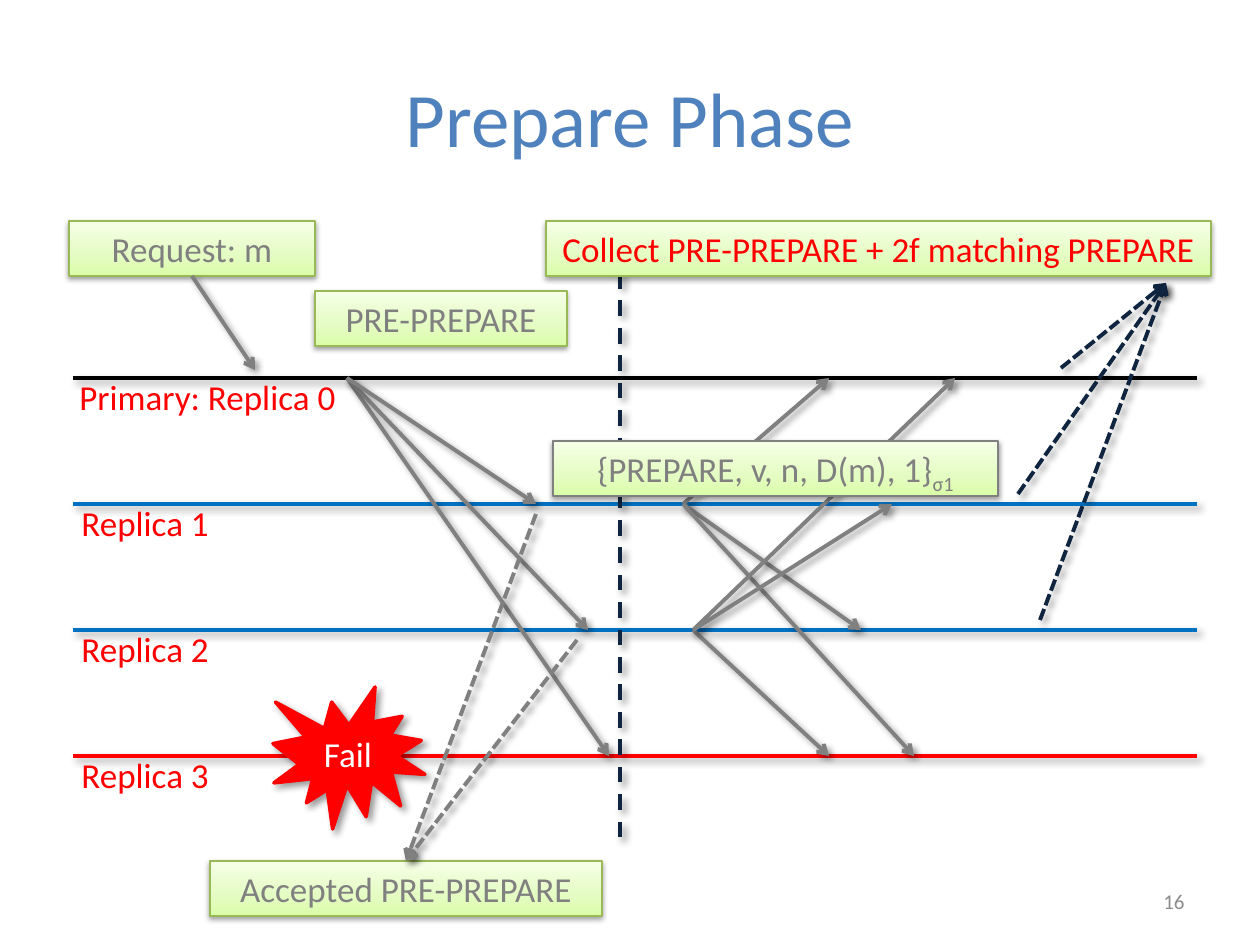
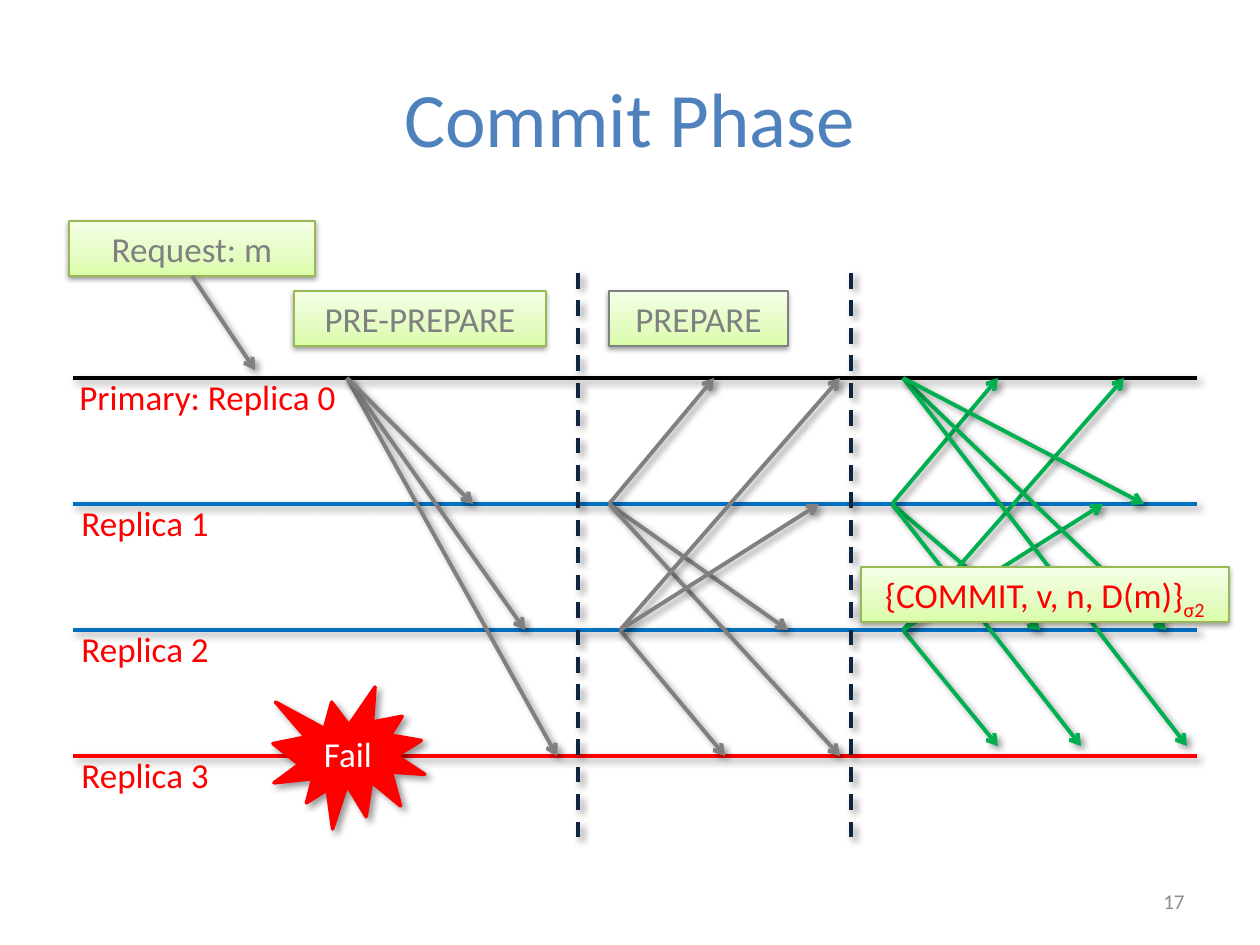
from copy import deepcopy

from lxml.etree import SubElement
from pptx import Presentation
from pptx.dml.color import RGBColor
from pptx.enum.dml import MSO_LINE
from pptx.enum.shapes import MSO_CONNECTOR, MSO_SHAPE
from pptx.enum.text import MSO_ANCHOR, MSO_AUTO_SIZE, PP_ALIGN
from pptx.oxml.ns import qn
from pptx.util import Pt

EMU_PER_PX = 914400 / 126
FONT = "Calibri"
TITLE_BLUE = "4F81BD"
GRAY = "808080"
RED = "FF0000"
WHITE = "FFFFFF"
NAVY = "0F243E"
GREEN = "00B050"
NUMBER_GRAY = "8C8C8C"
BOX_BORDER = "98B955"
BOX_STOPS = [(0, "DAFDA7"), (0.35, "E4FCC2"), (1, "F5FFE7")]
BOX_HEIGHT = 55
REPLICAS = [("Primary: Replica 0", "000000"), ("Replica 1", "0070C0"),
            ("Replica 2", "0070C0"), ("Replica 3", RED)]
FAILED = 3
REPLICA_GAP = 126
TOP, BOTTOM = 0, 2  # connection sites of a rectangle


def px(length):
    return round(length * EMU_PER_PX)


def rgb(hex_color):
    return RGBColor.from_string(hex_color)


def replica_y(replica):
    return 378 + replica * REPLICA_GAP


def write(shape, text, size=20, color=GRAY, align=PP_ALIGN.LEFT,
          anchor=MSO_ANCHOR.TOP, grow=False, subscript=""):
    frame = shape.text_frame
    frame.word_wrap = True
    frame.vertical_anchor = anchor
    frame.auto_size = MSO_AUTO_SIZE.SHAPE_TO_FIT_TEXT if grow else MSO_AUTO_SIZE.NONE
    paragraph = frame.paragraphs[0]
    paragraph.alignment = align
    for part in filter(None, (text, subscript)):
        run = paragraph.add_run()
        run.text = part
        run.font.name = FONT
        run.font.size = Pt(size)
        run.font.color.rgb = rgb(color)
    if subscript:
        run.font._element.set("baseline", "-25000")


def cast_shadow(shape, opacity=40, blur=4, distance=3, angle=45):
    properties = shape._element.spPr
    for old in properties.findall(qn("a:effectLst")):
        properties.remove(old)
    effects = SubElement(properties, qn("a:effectLst"))
    shadow = SubElement(effects, qn("a:outerShdw"), blurRad=str(Pt(blur)),
                        dist=str(Pt(distance)), dir=str(angle * 60000),
                        rotWithShape="0")
    tint = SubElement(shadow, qn("a:srgbClr"), val="000000")
    SubElement(tint, qn("a:alpha"), val=str(opacity * 1000))


def add_line(slide, start, end, color=GRAY, dash=None, arrow=False):
    line = slide.shapes.add_connector(MSO_CONNECTOR.STRAIGHT, *map(px, start + end))
    line.line.color.rgb = rgb(color)
    line.line.width = Pt(2.25)
    if dash:
        line.line.dash_style = dash
    if arrow:
        SubElement(line.line._get_or_add_ln(), qn("a:tailEnd"), type="arrow")
    cast_shadow(line)
    return line


def add_message(slide, text, left, top, width, color=GRAY, border=BOX_BORDER,
                subscript=""):
    box = slide.shapes.add_shape(MSO_SHAPE.RECTANGLE,
                                 *map(px, (left, top, width, BOX_HEIGHT)))
    box.fill.gradient()
    box.fill.gradient_angle = 90
    stops = box._element.spPr.find(".//" + qn("a:gsLst"))
    stops.insert(1, deepcopy(stops[0]))
    for stop, (position, stop_color) in zip(box.fill.gradient_stops, BOX_STOPS):
        stop.position = position
        stop.color.rgb = rgb(stop_color)
    box.line.color.rgb = rgb(border)
    box.line.width = Pt(0.75)
    cast_shadow(box, opacity=38, blur=3.1, distance=1.6, angle=90)
    write(box, text, color=color, align=PP_ALIGN.CENTER, grow=True,
          subscript=subscript)
    return box


def add_label(slide, text, left, top, width, height, **text_format):
    label = slide.shapes.add_textbox(*map(px, (left, top, width, height)))
    write(label, text, **text_format)


def add_broadcast(slide, x, sender, receivers, color=GRAY, failed_gap=0):
    """Arrows from the sender at x to {replica: x}; failed_gap stops short of Replica 3."""
    for replica, arrival in receivers.items():
        gap = failed_gap if replica == FAILED else 0
        add_line(slide, (x, replica_y(sender)), (arrival, replica_y(replica) - gap),
                 color, arrow=True)


def add_phase_divider(slide, x):
    add_line(slide, (x, 273), (x, 840), NAVY, MSO_LINE.DASH)


def add_failure(slide):
    burst = slide.shapes.add_shape(MSO_SHAPE.EXPLOSION1,
                                   *map(px, (273, 687, 152, 142)))
    burst.fill.solid()
    burst.fill.fore_color.rgb = rgb(RED)
    burst.line.color.rgb = rgb(RED)
    burst.line.width = Pt(2)
    cast_shadow(burst)
    write(burst, "Fail", color=WHITE, align=PP_ALIGN.CENTER, anchor=MSO_ANCHOR.MIDDLE)


def add_phase_slide(deck, title, number, pre_prepare_left, pre_prepare_arrivals):
    """Slide with the replica timelines, the request and the pre-prepare step."""
    slide = deck.slides.add_slide(deck.slide_layouts[5])
    heading = slide.shapes.title
    heading.left, heading.top, heading.width, heading.height = map(
        px, (63, 38, 1134, 158))
    write(heading, title, size=44, color=TITLE_BLUE, align=PP_ALIGN.CENTER,
          anchor=MSO_ANCHOR.MIDDLE)

    request = add_message(slide, "Request: m", 69, 221, 246)
    request_arrow = add_line(slide, (192, 276), (255, 370), arrow=True)
    request_arrow.begin_connect(request, BOTTOM)
    add_message(slide, "PRE-PREPARE", pre_prepare_left, 291, 252)

    for replica, (_, color) in enumerate(REPLICAS):
        y = replica_y(replica)
        add_line(slide, (73, y), (1197, y), color)
    add_broadcast(slide, 347, 0, pre_prepare_arrivals)
    for replica, (name, _) in enumerate(REPLICAS):
        left, width = (69, 246) if replica else (67, 374)
        add_label(slide, name, left, replica_y(replica) - 9, width, 58,
                  color=RED, grow=True)
    add_failure(slide)
    add_label(slide, str(number), 903, 876, 294, 50, size=12, color=NUMBER_GRAY,
              align=PP_ALIGN.RIGHT, anchor=MSO_ANCHOR.MIDDLE)
    return slide


def build_prepare(deck):
    slide = add_phase_slide(deck, "Prepare Phase", 16, 315, {3: 609, 2: 588, 1: 536})
    add_phase_divider(slide, 620)
    add_broadcast(slide, 683, 1, {0: 829, 2: 861, 3: 914})
    add_broadcast(slide, 693, 2, {3: 829, 0: 955, 1: 892})
    add_message(slide, "{PREPARE, v, n, D(m), 1}", 553, 441, 445, border=GRAY,
                subscript="σ1")

    accepted = add_message(slide, "Accepted PRE-PREPARE", 210, 861, 392)
    for replica, x in {1: 536, 2: 577}.items():
        acceptance = add_line(slide, (x, replica_y(replica) + 10), (406, 861),
                              dash=MSO_LINE.SQUARE_DOT, arrow=True)
        acceptance.end_connect(accepted, TOP)

    add_message(slide, "Collect PRE-PREPARE + 2f matching PREPARE", 546, 221, 665,
                color=RED)
    for replica, x in enumerate((1061, 1018, 1040)):
        add_line(slide, (x, replica_y(replica) - 10), (1166, 283), NAVY,
                 MSO_LINE.SQUARE_DOT, arrow=True)


def build_commit(deck):
    slide = add_phase_slide(deck, "Commit Phase", 17, 294, {3: 557, 2: 525, 1: 473})
    add_phase_divider(slide, 578)
    add_broadcast(slide, 609, 1, {0: 714, 2: 788, 3: 840})
    add_broadcast(slide, 620, 2, {3: 725, 0: 840, 1: 819})
    add_message(slide, "PREPARE", 609, 291, 179, border=GRAY)

    add_phase_divider(slide, 851)
    commits = [(892, 1, {0: 998, 2: 1040, 3: 1081}),
               (903, 2, {3: 998, 0: 1124, 1: 1103}),
               (903, 0, {2: 1166, 3: 1187, 1: 1144})]
    for x, sender, receivers in commits:
        add_broadcast(slide, x, sender, receivers, GREEN, failed_gap=10)
    add_message(slide, "{COMMIT, v, n, D(m)}", 861, 567, 368, color=RED,
                subscript="σ2")


def main():
    deck = Presentation()
    deck.slide_width, deck.slide_height = px(1260), px(945)
    build_prepare(deck)
    build_commit(deck)
    deck.save("out.pptx")


if __name__ == "__main__":
    main()
